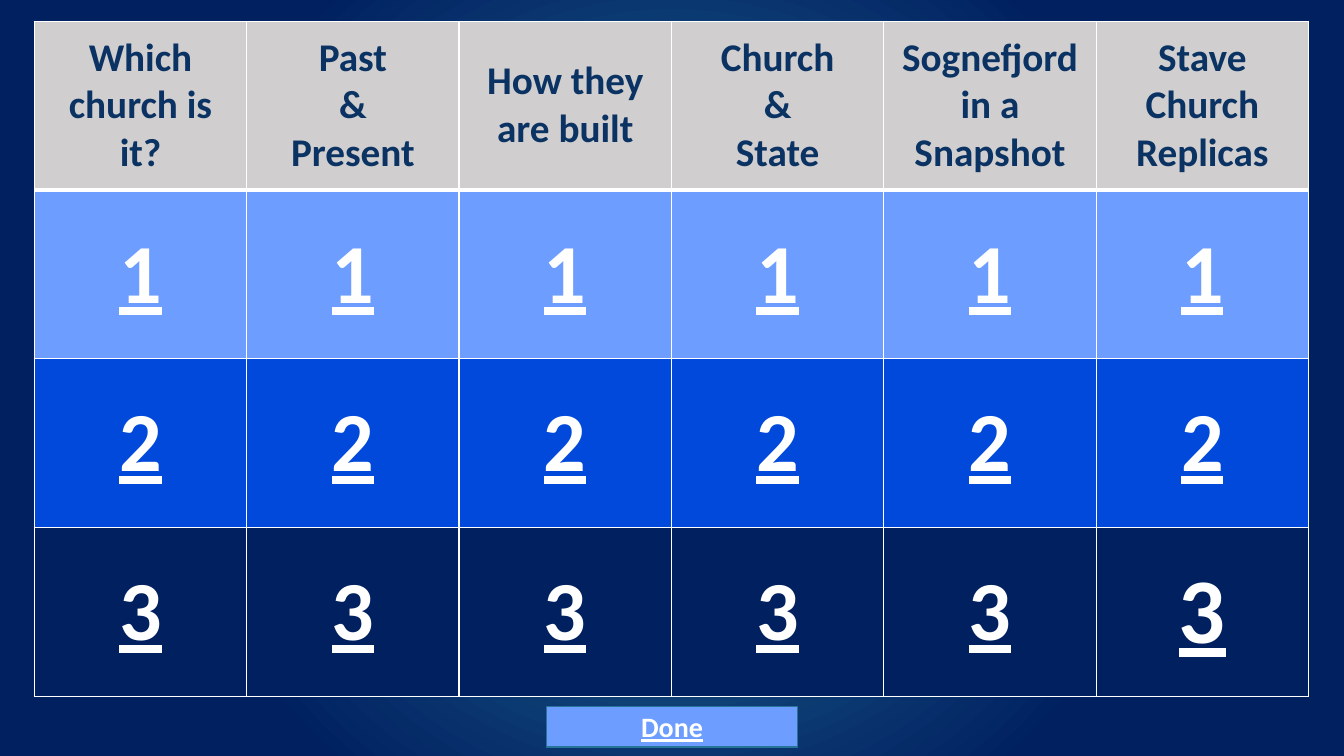
import dataclasses

import lxml.etree
import pptx
import pptx.dml.color
import pptx.enum.shapes
import pptx.enum.text
import pptx.oxml.ns
import pptx.util

Inches = pptx.util.Inches
Pt = pptx.util.Pt
RGB = pptx.dml.color.RGBColor.from_string
qn = pptx.oxml.ns.qn


@dataclasses.dataclass(frozen=True)
class Theme:
    font: str = "Calibri"
    glow: str = "27749A"
    navy: str = "002060"
    heading: str = "0A3263"
    heading_fill: str = "D0CECE"
    light_blue: str = "6D9EFF"
    blue: str = "0049DA"
    white: str = "FFFFFF"
    heading_size: int = 28
    number_size: int = 60
    last_number_size: int = 66
    button_size: int = 20


theme = Theme()


def write_text(tf, text, size, color, underline):
    """Fill a text frame with centred bold text, one paragraph per line."""
    tf.text = text
    tf.word_wrap = True
    for p in tf.paragraphs:
        p.alignment = pptx.enum.text.PP_ALIGN.CENTER
        p.font.name = theme.font
        p.font.size = Pt(size)
        p.font.bold = True
        p.font.underline = underline
        p.font.color.rgb = RGB(color)


def set_borders(cell, widths):
    """Draw white borders; widths maps the sides L, R, T, B to points."""
    tc_pr = cell._tc.get_or_add_tcPr()
    for i, (side, width) in enumerate(widths.items()):
        ln = lxml.etree.Element(qn(f"a:ln{side}"), w=str(Pt(width)))
        fill = lxml.etree.SubElement(ln, qn("a:solidFill"))
        lxml.etree.SubElement(fill, qn("a:srgbClr"), val=theme.white)
        tc_pr.insert(i, ln)


prs = pptx.Presentation()
prs.slide_width = Inches(13.33)
prs.slide_height = Inches(7.5)
s = prs.slides.add_slide(prs.slide_layouts[6])

# Radial background
bg = s.background.fill
bg.gradient()
for stop, color, position in zip(bg.gradient_stops, (theme.glow, theme.navy), (0, 0.67)):
    stop.color.rgb = RGB(color)
    stop.position = position
lin = next(s.element.iter(qn("a:lin")))
circle = lxml.etree.Element(qn("a:path"), path="circle")
lxml.etree.SubElement(circle, qn("a:fillToRect"), l="50000", t="50000", r="50000", b="50000")
lin.getparent().replace(lin, circle)

# Question board
categories = [
    "Which church is it?",
    "Past\n&\nPresent",
    "How they are built",
    "Church\n&\nState",
    "Sognefjord in a Snapshot",
    "Stave Church Replicas",
]
row_fills = [theme.heading_fill, theme.light_blue, theme.blue, theme.navy]
last_row, last_col = len(row_fills) - 1, len(categories) - 1
board = s.shapes.add_table(len(row_fills), len(categories),
                           Inches(0.34), Inches(0.21), Inches(12.64), Inches(6.7)).table
board.first_row = False
board.horz_banding = False

for row, row_fill in enumerate(row_fills):
    for col, category in enumerate(categories):
        cell = board.cell(row, col)
        cell.vertical_anchor = pptx.enum.text.MSO_ANCHOR.MIDDLE
        cell.fill.solid()
        cell.fill.fore_color.rgb = RGB(row_fill)
        set_borders(cell, {"L": 1, "R": 1, "T": 3 if row == 1 else 1, "B": 3 if row == 0 else 1})
        if row == 0:
            write_text(cell.text_frame, category, theme.heading_size, theme.heading, False)
        else:
            is_last = (row, col) == (last_row, last_col)
            size = theme.last_number_size if is_last else theme.number_size
            write_text(cell.text_frame, str(row), size, theme.white, True)

# Done button
button = s.shapes.add_shape(pptx.enum.shapes.MSO_SHAPE.RECTANGLE,
                            Inches(5.42), Inches(7.01), Inches(2.49), Inches(0.4))
button.shadow.inherit = False
button.fill.solid()
button.fill.fore_color.rgb = RGB(theme.light_blue)
button.line.color.rgb = RGB(theme.glow)
button.line.width = Pt(1)
button.text_frame.vertical_anchor = pptx.enum.text.MSO_ANCHOR.MIDDLE
write_text(button.text_frame, "Done", theme.button_size, theme.white, True)

prs.save("out.pptx")
